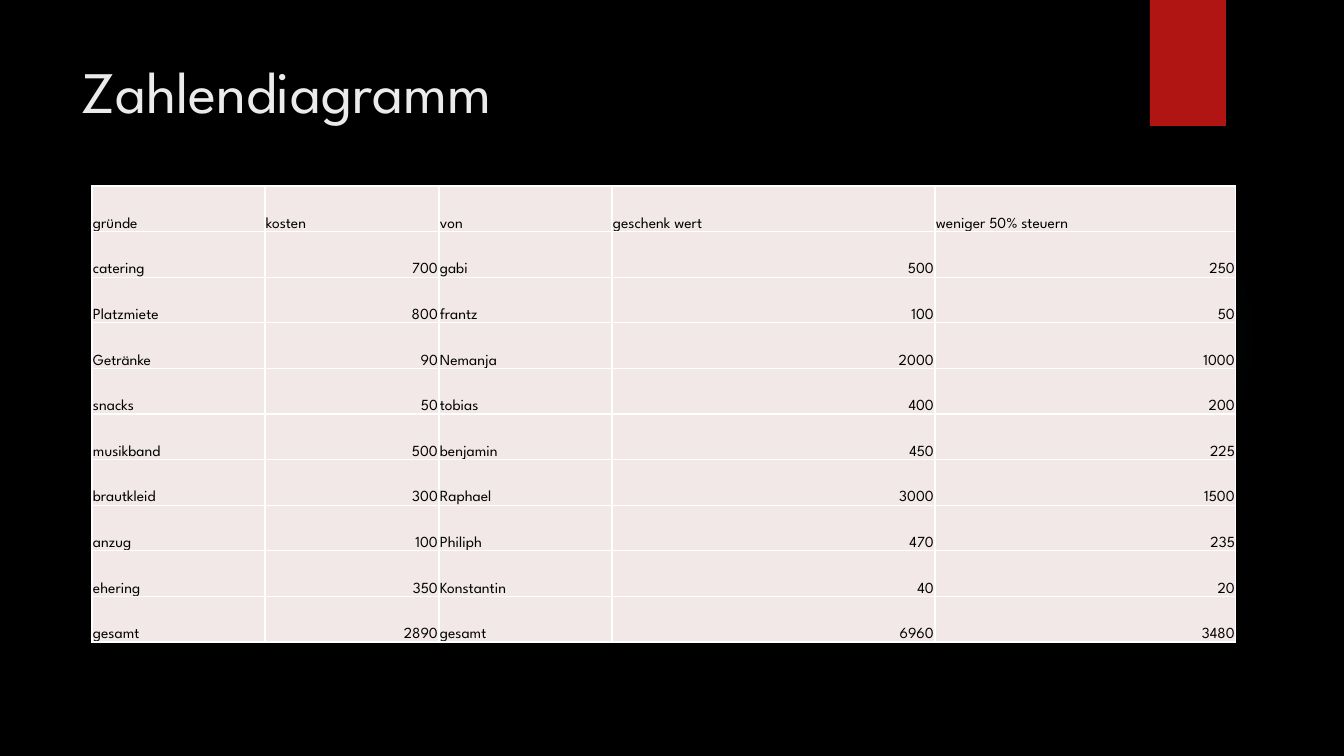
import pptx
import pptx.util
from dataclasses import dataclass
from lxml import etree
from pptx.dml.color import RGBColor
from pptx.enum.shapes import MSO_SHAPE
from pptx.enum.text import MSO_ANCHOR, PP_ALIGN
from pptx.oxml import parse_xml
from pptx.oxml.ns import nsdecls, qn

TITLE = "Zahlendiagramm"
HEADER = ("gründe", "kosten", "von", "geschenk wert", "weniger 50% steuern")
ROWS = [
    ("catering", 700, "gabi", 500, 250),
    ("Platzmiete", 800, "frantz", 100, 50),
    ("Getränke", 90, "Nemanja", 2000, 1000),
    ("snacks", 50, "tobias", 400, 200),
    ("musikband", 500, "benjamin", 450, 225),
    ("brautkleid", 300, "Raphael", 3000, 1500),
    ("anzug", 100, "Philiph", 470, 235),
    ("ehering", 350, "Konstantin", 40, 20),
    ("gesamt", 2890, "gesamt", 6960, 3480),
]

# px
SLIDE = (1344, 756)
GLOW = (949, 184, 310, 310)
RIBBON = (1150, 0, 76, 126)
TITLE_BOX = (71, 50, 1037, 154)
TABLE_AT = (92, 186)
TABLE_HEIGHT = 456
COLUMNS = (173, 174, 173, 323, 301)
CELL_INSET = 1
GLOW_STOPS = ((0, 7), (36, 6), (69, 0))  # position %, opacity %


@dataclass(frozen=True)
class Theme:
    font: str = "League Spartan"
    background: str = "000000"
    glow: str = "50B9C1"
    ribbon: str = "B01513"
    title: str = "EBEBEB"
    cell: str = "F2E8E7"
    border: str = "FFFFFF"
    text: str = "000000"
    title_pt: int = 42
    cell_pt: int = 11
    border_pt: int = 1


THEME = Theme()


def px(n):
    return round(n * 914400 / 100.8)


def box(rect):
    return [px(n) for n in rect]


def paint(fill, color):
    fill.solid()
    fill.fore_color.rgb = RGBColor.from_string(color)


def write(tf, text, size, color, align=PP_ALIGN.LEFT):
    p = tf.paragraphs[0]
    p.alignment = align
    r = p.add_run()
    r.text = text
    r.font.name = THEME.font
    r.font.size = pptx.util.Pt(size)
    r.font.color.rgb = RGBColor.from_string(color)


def add_plain(s, kind, rect):
    sp = s.shapes.add_shape(kind, *box(rect))
    sp.shadow.inherit = False
    sp.line.fill.background()
    return sp


def add_glow(s):
    sp = add_plain(s, MSO_SHAPE.OVAL, GLOW)
    stops = "".join(
        f'<a:gs pos="{pos * 1000}"><a:srgbClr val="{THEME.glow}">'
        f'<a:alpha val="{alpha * 1000}"/></a:srgbClr></a:gs>'
        for pos, alpha in GLOW_STOPS)
    gradient = parse_xml(
        f'<a:gradFill {nsdecls("a")}><a:gsLst>{stops}</a:gsLst><a:path path="circle">'
        '<a:fillToRect l="50000" t="50000" r="50000" b="50000"/></a:path></a:gradFill>')
    sp._element.spPr.find(qn("a:prstGeom")).addnext(gradient)


def add_borders(cell):
    tcPr = cell._tc.get_or_add_tcPr()
    for side in ("lnL", "lnR", "lnT", "lnB"):
        ln = etree.SubElement(tcPr, qn(f"a:{side}"), w=str(pptx.util.Pt(THEME.border_pt)))
        fill = etree.SubElement(ln, qn("a:solidFill"))
        etree.SubElement(fill, qn("a:srgbClr"), val=THEME.border)


def fill_cell(cell, value):
    add_borders(cell)
    paint(cell.fill, THEME.cell)
    cell.margin_left = cell.margin_right = cell.margin_top = px(CELL_INSET)
    cell.margin_bottom = 0
    cell.vertical_anchor = MSO_ANCHOR.BOTTOM
    align = PP_ALIGN.RIGHT if isinstance(value, int) else PP_ALIGN.LEFT
    write(cell.text_frame, str(value), THEME.cell_pt, THEME.text, align)


def add_cost_table(s):
    lines = [HEADER, *ROWS]
    rect = (*TABLE_AT, sum(COLUMNS), TABLE_HEIGHT)
    table = s.shapes.add_table(len(lines), len(COLUMNS), *box(rect)).table
    table.first_row = table.horz_banding = False
    for column, width in zip(table.columns, COLUMNS):
        column.width = px(width)
    for row, line in zip(table.rows, lines):
        row.height = px(TABLE_HEIGHT / len(lines))
        for cell, value in zip(row.cells, line):
            fill_cell(cell, value)


def main():
    prs = pptx.Presentation()
    prs.slide_width, prs.slide_height = box(SLIDE)
    s = prs.slides.add_slide(prs.slide_layouts[5])
    paint(s.background.fill, THEME.background)

    add_glow(s)
    paint(add_plain(s, MSO_SHAPE.RECTANGLE, RIBBON).fill, THEME.ribbon)

    title = s.shapes.title
    title.left, title.top, title.width, title.height = box(TITLE_BOX)
    title.text_frame.vertical_anchor = MSO_ANCHOR.TOP
    write(title.text_frame, TITLE, THEME.title_pt, THEME.title)

    add_cost_table(s)
    prs.save("out.pptx")


if __name__ == "__main__":
    main()
